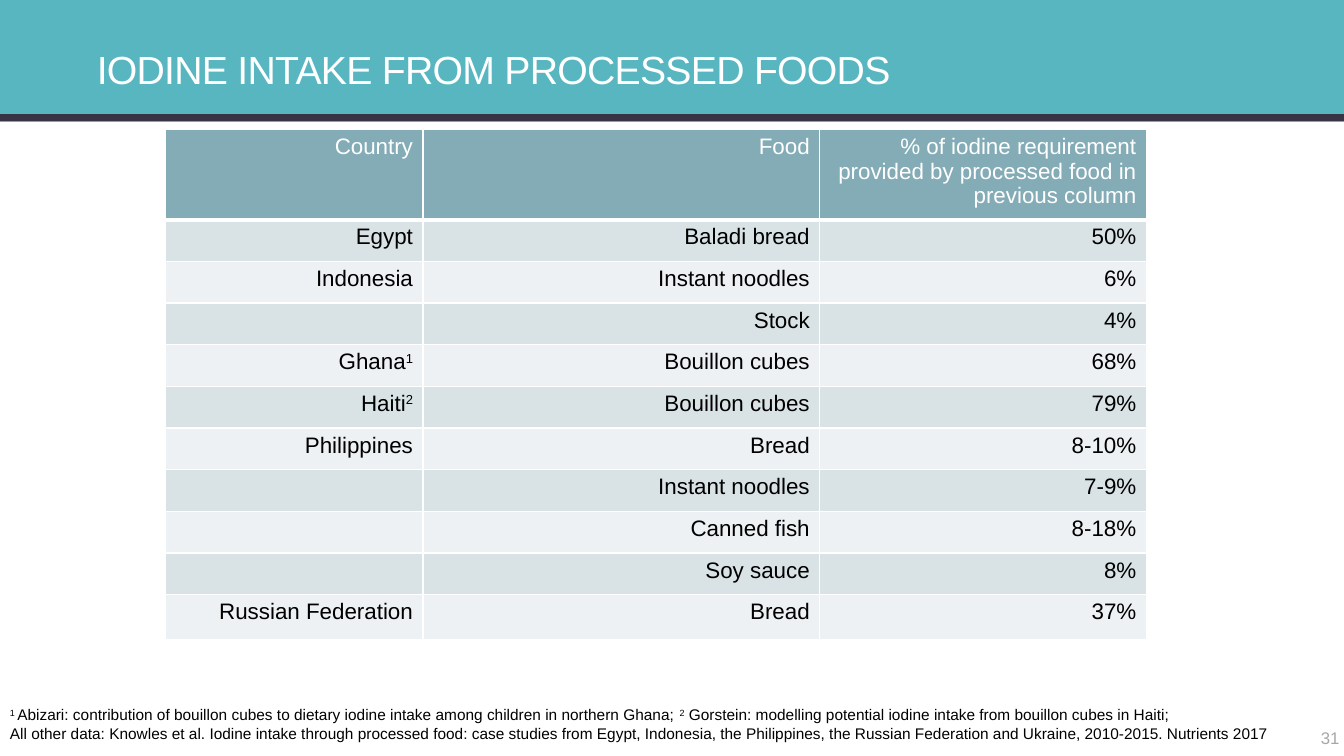
from lxml import etree
from pptx import Presentation
from pptx import util as u
from pptx.dml.color import RGBColor
from pptx.enum import shapes, text
from pptx.oxml import ns

TITLE = "IODINE INTAKE FROM PROCESSED FOODS"
PAGE = "31"
HEADINGS = ("Country", "Food",
            "% of iodine requirement provided by processed food in previous column")
INTAKES = [
    ("Egypt", "Baladi bread", "50%"),
    ("Indonesia", "Instant noodles", "6%"),
    ("", "Stock", "4%"),
    ("Ghana^1^", "Bouillon cubes", "68%"),
    ("Haiti^2^", "Bouillon cubes", "79%"),
    ("Philippines", "Bread", "8-10%"),
    ("", "Instant noodles", "7-9%"),
    ("", "Canned fish", "8-18%"),
    ("", "Soy sauce", "8%"),
    ("Russian Federation", "Bread", "37%"),
]
SOURCES = [
    "^1 ^Abizari: contribution of bouillon cubes to dietary iodine intake among "
    "children in northern Ghana; ^2^ Gorstein: modelling potential iodine intake "
    "from bouillon cubes in Haiti;",
    "All other data: Knowles et al. Iodine intake through processed food: case studies "
    "from Egypt, Indonesia, the Philippines, the Russian Federation and Ukraine, "
    "2010-2015. Nutrients 2017",
]

WHITE = RGBColor(0xFF, 0xFF, 0xFF)
BLACK = RGBColor(0, 0, 0)
TEAL = RGBColor(0x58, 0xB6, 0xC0)
NAVY = RGBColor(0x37, 0x35, 0x45)
GREY = RGBColor(0xA7, 0xA7, 0xA7)
HEADING_FILL = RGBColor(0x84, 0xAC, 0xB6)
BANDS = (RGBColor(0xD9, 0xE3, 0xE5), RGBColor(0xED, 0xF1, 0xF3))

COLUMN_WIDTHS = (6.48, 10, 8.23)
HEADING_HEIGHT, ROW_HEIGHT, LAST_HEIGHT = 2.13, 1.05, 1.12


def write(paragraph, words, size, colour, align=text.PP_ALIGN.LEFT):
    paragraph.alignment = align
    for index, part in enumerate(words.split("^")):
        if not part:
            continue
        run = paragraph.add_run()
        run.text = part
        run.font.size, run.font.name = u.Pt(size), "Arial"
        run.font.color.rgb = colour
        if index % 2:
            run.font._element.set("baseline", "30000")


def add_box(slide, place, inset, anchor, wrap=True):
    frame = slide.shapes.add_textbox(*map(u.Cm, place)).text_frame
    frame.word_wrap, frame.vertical_anchor = wrap, anchor
    frame.margin_left = frame.margin_right = u.Cm(inset[0])
    frame.margin_top = frame.margin_bottom = u.Cm(inset[1])
    return frame


def add_borders(cell, bottom):
    properties = cell._tc.get_or_add_tcPr()
    for side, width in (("L", 1), ("R", 1), ("T", 1), ("B", bottom)):
        border = etree.SubElement(properties, ns.qn("a:ln" + side), w=str(u.Pt(width)))
        fill = etree.SubElement(border, ns.qn("a:solidFill"))
        etree.SubElement(fill, ns.qn("a:srgbClr"), val=str(WHITE))


def add_header(slide):
    band = slide.shapes.add_shape(shapes.MSO_SHAPE.RECTANGLE, 0, 0, u.Cm(33.87), u.Cm(3.07))
    band.shadow.inherit = False
    band.fill.solid()
    band.fill.fore_color.rgb = TEAL
    band.line.fill.background()
    rule = slide.shapes.add_connector(shapes.MSO_CONNECTOR.STRAIGHT,
                                      0, u.Cm(2.97), u.Cm(33.87), u.Cm(2.97))
    rule.line.color.rgb = NAVY
    rule.line.width = u.Pt(5)
    etree.SubElement(rule._element.spPr, ns.qn("a:effectLst"))
    title = add_box(slide, (2.44, 0.23, 26.44, 2.11), (0, 0), text.MSO_ANCHOR.BOTTOM)
    write(title.paragraphs[0], TITLE, 28, WHITE)
    title.paragraphs[0].runs[0].font._element.set("spc", "-50")
    title.paragraphs[0].line_spacing = 0.9


def add_intakes(slide):
    heights = [HEADING_HEIGHT] + [ROW_HEIGHT] * (len(INTAKES) - 1) + [LAST_HEIGHT]
    table = slide.shapes.add_table(
        len(heights), len(COLUMN_WIDTHS), u.Cm(4.18), u.Cm(3.25),
        u.Cm(sum(COLUMN_WIDTHS)), u.Cm(sum(heights))).table
    for column, width in zip(table.columns, COLUMN_WIDTHS):
        column.width = u.Cm(width)
    for number, (height, entries) in enumerate(zip(heights, [HEADINGS] + INTAKES)):
        table.rows[number].height = u.Cm(height)
        heading = number == 0
        for cell, words in zip(table.rows[number].cells, entries):
            add_borders(cell, 3 if heading else 1)
            cell.fill.solid()
            cell.fill.fore_color.rgb = HEADING_FILL if heading else BANDS[(number - 1) % 2]
            write(cell.text_frame.paragraphs[0], words, 16,
                  WHITE if heading else BLACK, text.PP_ALIGN.RIGHT)
            for run in cell.text_frame.paragraphs[0].runs:
                run.font.bold = False


def add_footer(slide):
    sources = add_box(slide, (0, 17.65, 33.87, 1.19), (0.25, 0.13), text.MSO_ANCHOR.TOP)
    write(sources.paragraphs[0], SOURCES[0], 11, BLACK)
    write(sources.add_paragraph(), SOURCES[1], 11, BLACK)
    page = add_box(slide, (33.15, 18.21, 0.74, 0.76), (0.13, 0.13),
                   text.MSO_ANCHOR.MIDDLE, wrap=False)
    write(page.paragraphs[0], PAGE, 12, GREY, text.PP_ALIGN.RIGHT)


def main():
    deck = Presentation()
    deck.slide_width, deck.slide_height = u.Cm(33.87), u.Cm(19.05)
    slide = deck.slides.add_slide(deck.slide_layouts[6])
    add_header(slide)
    add_intakes(slide)
    add_footer(slide)
    deck.save("out.pptx")


if __name__ == "__main__":
    main()
